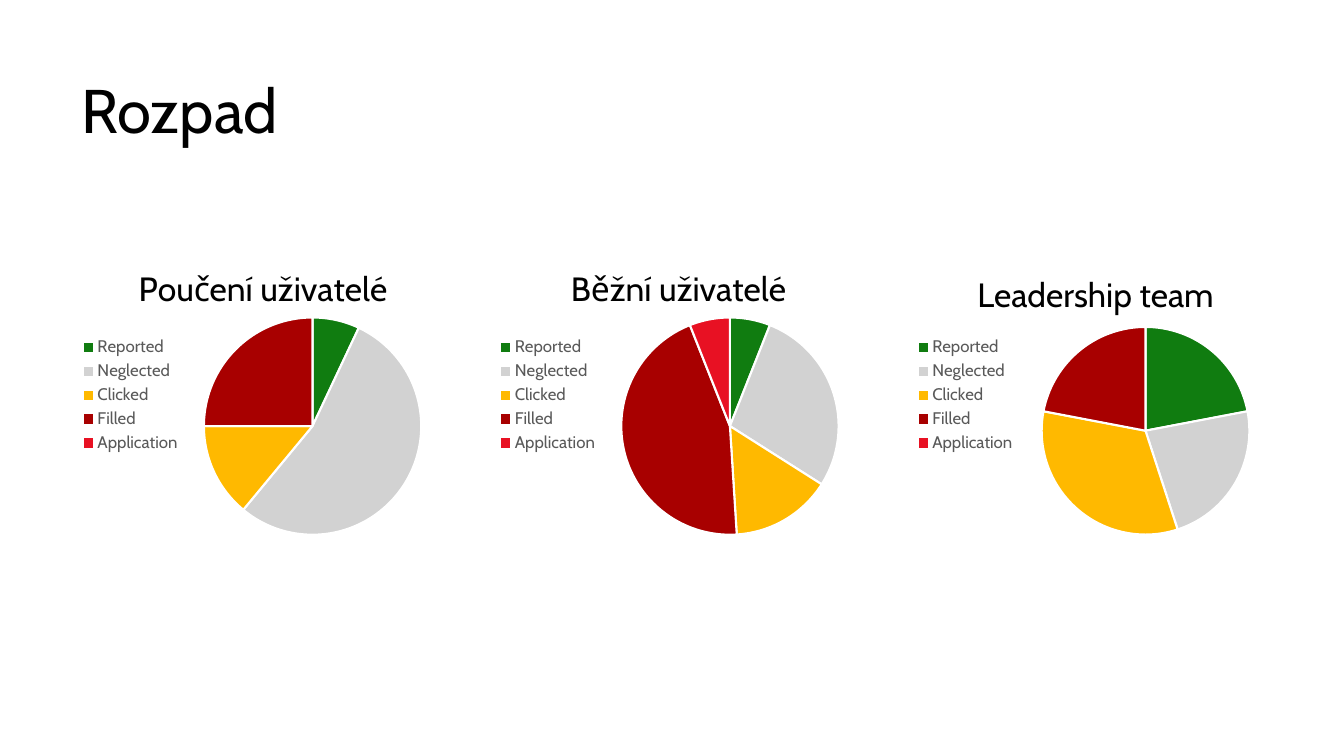
from dataclasses import dataclass

from lxml.etree import SubElement, Element
from pptx import Presentation
from pptx.chart.data import CategoryChartData as ChartData
from pptx.dml.color import RGBColor as RGB
from pptx.enum.chart import XL_CHART_TYPE as Kind, XL_LEGEND_POSITION as Side
from pptx.enum.text import MSO_ANCHOR as Anchor, PP_ALIGN as Align
from pptx.oxml.ns import qn
from pptx.util import Inches, Pt

TITLE = "Rozpad"
STATES = ["Reported", "Neglected", "Clicked", "Filled", "Application"]

# Title and pie places are fractions of the chart: (x, y) and (x, y, w, h)
WIDE = (0.36, 0.25, 0.59, 0.7)
SMALL = (0.37, 0.28, 0.56, 0.67)
PIES = [
    ("Poučení uživatelé", (7, 54, 14, 25, 0), (0.17, 0.06), WIDE),
    ("Běžní uživatelé", (6, 28, 15, 45, 6), (0.21, 0.06), WIDE),
    ("Leadership team", (22, 23, 33, 22, 0), (0.18, 0.08), SMALL),
]
LEFT, TOP, STEP = 0.69, 2.38, 4.14
WIDTH, HEIGHT = 3.68, 3.08


@dataclass(frozen=True)
class Theme:
    font: str = "Cabin"
    base: str = "Calibri"
    ink: str = "000000"
    grey: str = "595959"
    edge: str = "FFFFFF"
    slices: tuple = ("107C10", "D2D2D2", "FFB900", "A80000", "E81123")
    title: int = 44
    head: int = 24
    legend: int = 12
    small: int = 10


THEME = Theme()


def style(font, size, color=THEME.ink, name=THEME.font):
    font.size, font.name, font.bold = Pt(size), name, False
    font.color.rgb = RGB.from_string(color)


def place(parent, index, box, inner=False):
    """Give a chart part a manual layout, as child number index."""
    for old in parent.findall(qn("c:layout")):
        parent.remove(old)
    layout = Element(qn("c:layout"))
    manual = SubElement(layout, qn("c:manualLayout"))
    rules = [("layoutTarget", "inner")] if inner else []
    rules += [("xMode", "edge"), ("yMode", "edge")]
    rules += zip("xywh", box)
    for tag, value in rules:
        SubElement(manual, qn("c:" + tag)).set("val", str(value))
    parent.insert(index, layout)


def add_pie(slide, left, head, values, spot, area):
    data = ChartData()
    data.categories = STATES
    data.add_series("Series 1", values)
    chart = slide.shapes.add_chart(
        Kind.PIE, Inches(left), Inches(TOP), Inches(WIDTH), Inches(HEIGHT), data
    ).chart
    style(chart.font, THEME.small, name=THEME.base)

    chart.has_title = True
    para = chart.chart_title.text_frame.paragraphs[0]
    run = para.add_run()
    run.text = head
    for font in (para.font, run.font):
        style(font, THEME.head)

    chart.has_legend = True
    chart.legend.position = Side.LEFT
    chart.legend.include_in_layout = False
    style(chart.legend.font, THEME.legend, THEME.grey)

    plot = chart.plots[0]
    plot.vary_by_categories = True
    for index, color in enumerate(THEME.slices):
        form = plot.series[0].points[index].format
        form.fill.solid()
        form.fill.fore_color.rgb = RGB.from_string(color)
        form.line.color.rgb = RGB.from_string(THEME.edge)
        form.line.width = Pt(1.5)

    root = chart.element
    place(root.find(".//" + qn("c:title")), 1, spot)
    place(root.find(".//" + qn("c:plotArea")), 0, area, inner=True)


def add_title(slide):
    title = slide.shapes.title
    title.left, title.top = Inches(0.71), Inches(0.75)
    title.width, title.height = Inches(11.5), Inches(1.45)
    title.text_frame.vertical_anchor = Anchor.TOP
    para = title.text_frame.paragraphs[0]
    para.text = TITLE
    para.alignment = Align.LEFT
    para.line_spacing = 0.9
    style(para.font, THEME.title)


def main():
    deck = Presentation()
    deck.slide_width, deck.slide_height = Inches(13.33), Inches(7.5)
    slide = deck.slides.add_slide(deck.slide_layouts[5])
    add_title(slide)
    for index, pie in enumerate(PIES):
        add_pie(slide, LEFT + index * STEP, *pie)
    deck.save("out.pptx")


if __name__ == "__main__":
    main()
